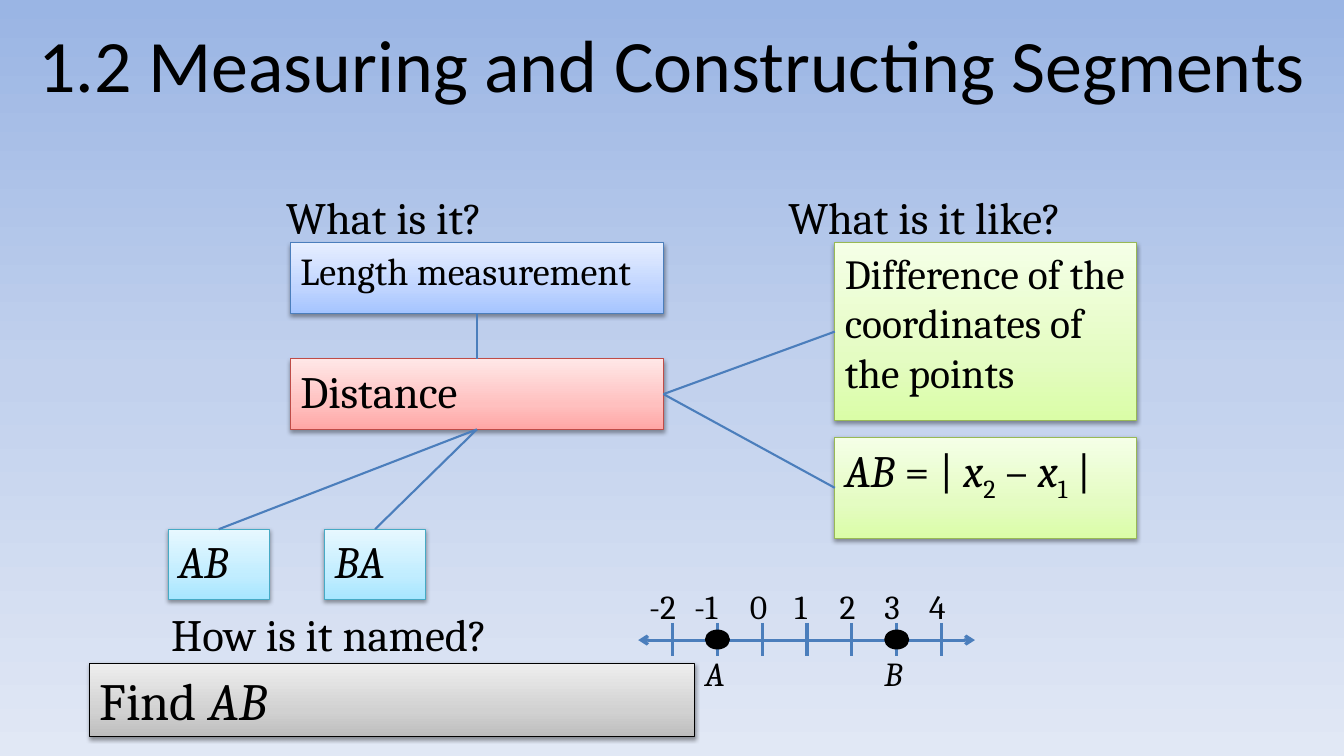
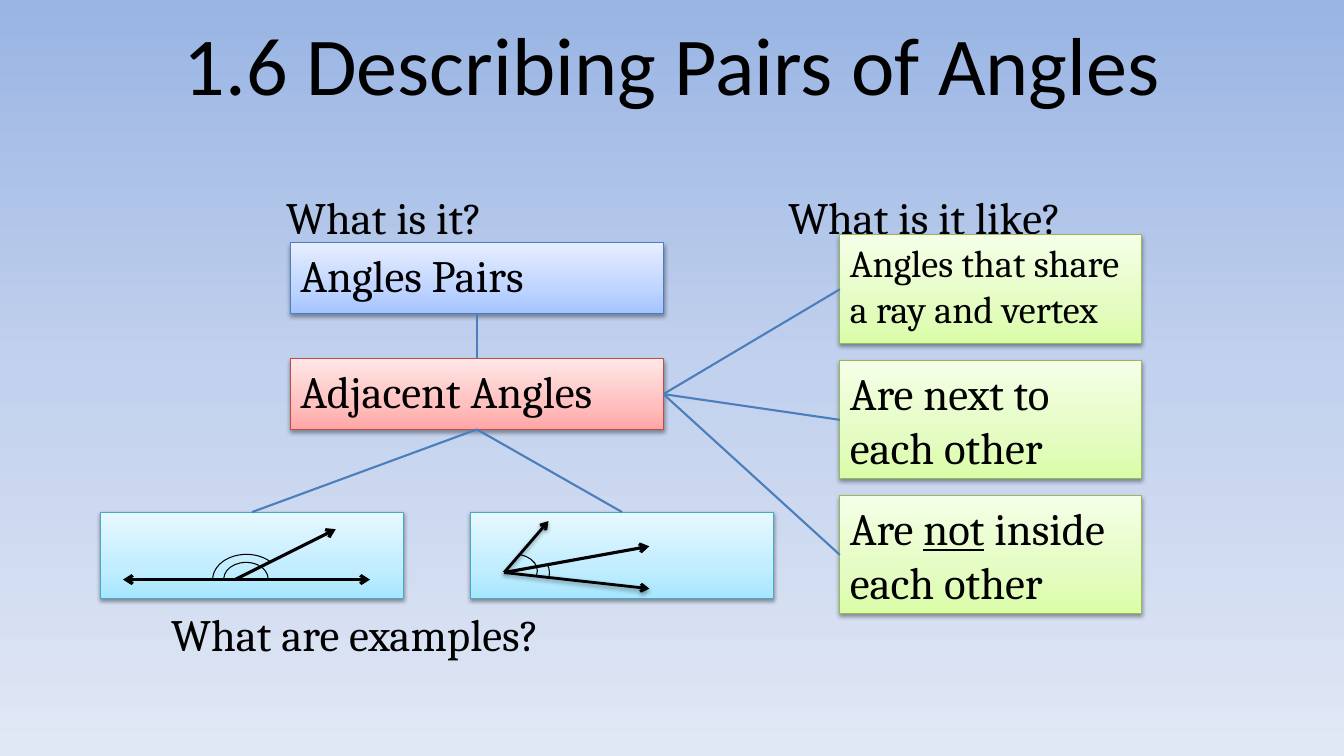
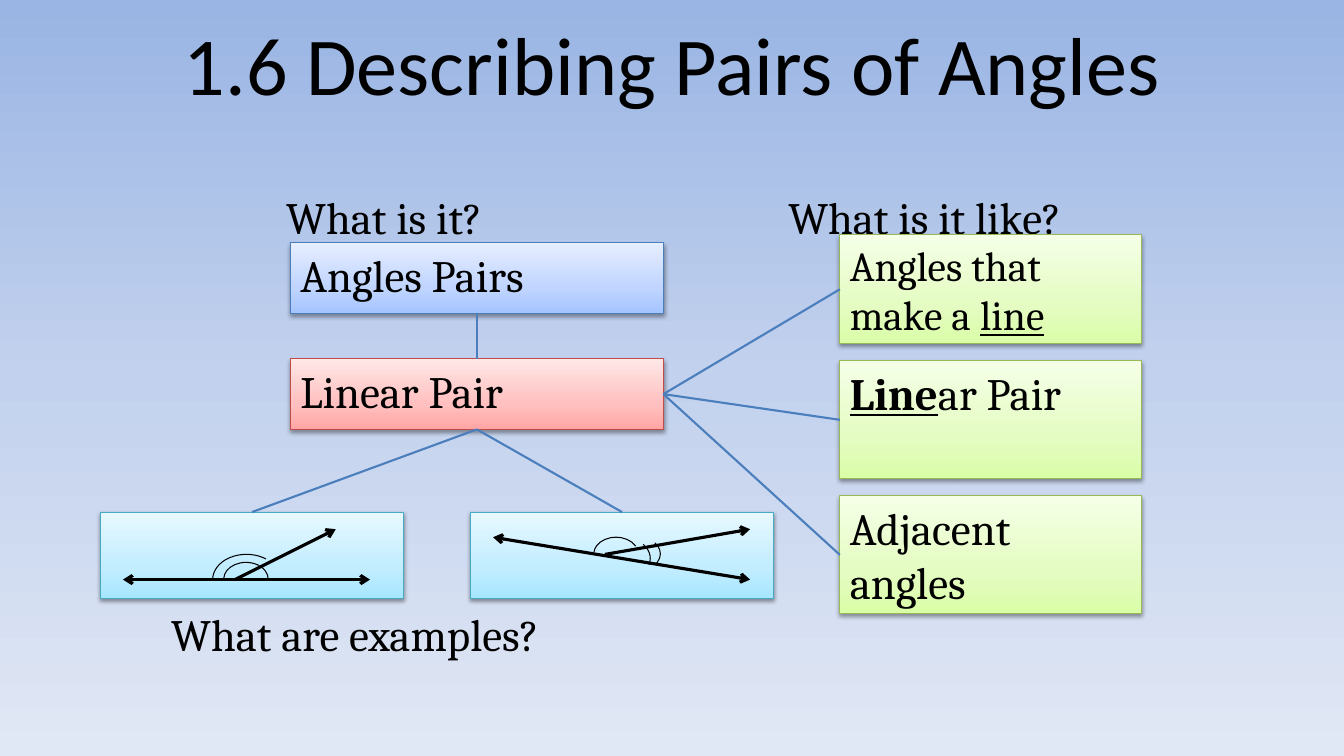
"""Build three concept-map slides on segments and pairs of angles."""
from copy import deepcopy

from lxml.etree import SubElement
from pptx import Presentation
from pptx.dml.color import RGBColor
from pptx.enum.shapes import MSO_CONNECTOR, MSO_SHAPE
from pptx.enum.text import MSO_ANCHOR, PP_ALIGN
from pptx.oxml.ns import qn
from pptx.util import Inches, Pt

BLACK = RGBColor(0x00, 0x00, 0x00)
LINK_BLUE = RGBColor(0x4B, 0x7E, 0xBC)
RED_EDGE = RGBColor(0xBF, 0x4C, 0x48)
GREEN_EDGE = RGBColor(0x98, 0xB9, 0x55)
AQUA_EDGE = RGBColor(0x46, 0xAA, 0xC5)


def gradient(middle, *colors):
    return list(zip((0, middle, 1), map(RGBColor.from_string, colors)))


BACKDROP = gradient(0.5, "9AB5E4", "C2D1ED", "E1E8F5")
BLUE = gradient(0.35, "A4C4FF", "BFD4FF", "E6EEFF"), LINK_BLUE
RED = gradient(0.35, "FFA6A5", "FFC0BF", "FFE7E7"), RED_EDGE
GREEN = gradient(0.35, "DAFDA7", "E4FCC2", "F5FFE7"), GREEN_EDGE
AQUA = gradient(0.35, "A7E6FF", "C1EDFF", "E7F8FF"), AQUA_EDGE
GRAY = gradient(0.35, "BDBDBD", "D1D1D1", "EEEEEE"), BLACK

TOP, LEFT, BOTTOM, RIGHT = range(4)


class ConceptDeck:
    """Holds the deck style and the slide being drawn."""

    def __init__(self):
        self.deck = Presentation()
        self.deck.slide_width = Inches(13.33)
        self.deck.slide_height = Inches(7.5)
        self.slide = None

    def new_slide(self, title, size):
        self.slide = self.deck.slides.add_slide(self.deck.slide_layouts[6])
        self.shade(self.slide.background.fill, self.slide.element, BACKDROP, 270)
        heading = self.label((0, 0, 13.33, 1.25), [title], size, "Calibri")
        heading.vertical_anchor = MSO_ANCHOR.MIDDLE
        heading.paragraphs[0].alignment = PP_ALIGN.CENTER

    def shade(self, fill, element, stops, angle):
        fill.gradient()
        fill.gradient_angle = angle
        stop_list = element.find(".//" + qn("a:gsLst"))
        stop_list.append(deepcopy(stop_list[0]))
        for stop, (position, color) in zip(fill.gradient_stops, stops):
            stop.position = position
            stop.color.rgb = color

    def cast_shadow(self, effects):
        shadow = SubElement(effects, qn("a:outerShdw"), blurRad="40000",
                            dist="20000", dir="5400000", rotWithShape="0")
        color = SubElement(shadow, qn("a:srgbClr"), val="000000")
        SubElement(color, qn("a:alpha"), val="38000")

    def add_text(self, frame, runs, size, font="Cambria"):
        frame.word_wrap = True
        frame.vertical_anchor = MSO_ANCHOR.TOP
        paragraph = frame.paragraphs[0]
        paragraph.alignment = PP_ALIGN.LEFT
        for part in runs:
            text, style = (part, "") if isinstance(part, str) else part
            run = paragraph.add_run()
            run.text = text
            run.font.name = font
            run.font.size = Pt(size)
            run.font.color.rgb = BLACK
            run.font.bold = style == "bold underline"
            run.font.italic = style == "italic"
            run.font.underline = "underline" in style
            if style == "subscript":
                run.font._element.set("baseline", "-25000")
        return frame

    def label(self, place, runs, size=32, font="Cambria"):
        area = self.slide.shapes.add_textbox(*map(Inches, place))
        return self.add_text(area.text_frame, runs, size, font)

    def box(self, place, theme, runs=(), size=32):
        stops, edge = theme
        box = self.slide.shapes.add_shape(MSO_SHAPE.RECTANGLE, *map(Inches, place))
        self.shade(box.fill, box.element, stops, 90)
        box.line.color.rgb = edge
        box.line.width = Pt(0.75)
        box.shadow.inherit = False
        self.cast_shadow(box.element.spPr.find(qn("a:effectLst")))
        self.add_text(box.text_frame, runs, size)
        return box

    def line(self, start, end, color=BLACK, width=2.25, ends=(), shadow=False):
        points = map(Inches, (*start, *end))
        line = self.slide.shapes.add_connector(MSO_CONNECTOR.STRAIGHT, *points)
        line.line.color.rgb = color
        line.line.width = Pt(width)
        outline = line.element.spPr.find(qn("a:ln"))
        for end_tag in ends:
            SubElement(outline, qn("a:" + end_tag), type="arrow")
        effects = SubElement(line.element.spPr, qn("a:effectLst"))
        if shadow:
            self.cast_shadow(effects)
        return line

    def ray(self, start, end, width=2.25, shadow=False):
        self.line(start, end, width=width, ends=["tailEnd"], shadow=shadow)

    def double_arrow(self, start, end, color=BLACK):
        self.line(start, end, color, ends=["headEnd", "tailEnd"])

    def link(self, source, source_side, target, target_side):
        link = self.line((0, 0), (0, 0), LINK_BLUE, 1.5)
        link.begin_connect(source, source_side)
        link.end_connect(target, target_side)

    def arc(self, place, start, end):
        arc = self.slide.shapes.add_shape(MSO_SHAPE.ARC, *map(Inches, place))
        arc.adjustments[0] = start
        arc.adjustments[1] = end
        arc.fill.background()
        arc.line.color.rgb = BLACK
        arc.line.width = Pt(0.75)
        arc.shadow.inherit = False

    def point(self, x, y, name):
        self.label((x - 0.22, 6.43, 0.44, 0.5), [(name, "italic")], 24)
        dot = self.slide.shapes.add_shape(
            MSO_SHAPE.OVAL, *map(Inches, (x - 0.11, y - 0.09, 0.22, 0.17)))
        dot.fill.solid()
        dot.fill.fore_color.rgb = BLACK
        dot.line.color.rgb = BLACK
        dot.line.width = Pt(2)
        dot.shadow.inherit = False

    def number_line(self):
        y, step = 6.35, 4 / 9
        self.double_arrow((6.33, y), (9.67, y), LINK_BLUE)
        for value in range(-2, 5):
            x = 7.56 + value * step
            self.line((x, y - 0.17), (x, y + 0.16), LINK_BLUE)
            indent = 0.33 if value < 0 else 0.22
            self.label((x - indent, 5.76, 0.56, 0.5), [str(value)], 24)
        for value, name in ((-1, "A"), (3, "B")):
            self.point(7.56 + value * step, y, name)

    def concept(self, category, name, question, category_size=32):
        concept = self.box((2.88, 3.56, 3.7, 0.7), RED, [name])
        parent = self.box((2.88, 2.41, 3.7, 0.7), BLUE, [category], category_size)
        self.link(parent, BOTTOM, concept, TOP)
        self.label((2.74, 1.83, 3.84, 0.64), ["What is it?"])
        self.label((7.72, 1.83, 3.84, 0.64), ["What is it like?"])
        self.label((1.6, 5.97, 7.11, 0.64), [question])
        return concept

    def traits(self, concept, left, top, rows):
        for height, size, runs in rows:
            trait = self.box((left, top, 2.99, height), GREEN, runs, size)
            self.link(concept, RIGHT, trait, LEFT)
            top += height + 0.17

    def example(self, concept, place, runs=()):
        example = self.box(place, AQUA, runs)
        self.link(concept, BOTTOM, example, TOP)

    def angle_pair_slide(self, name, rows, outer_arc_end):
        self.new_slide("1.6 Describing Pairs of Angles", 58.7)
        concept = self.concept("Angles Pairs", name, "What are examples?")
        self.traits(concept, 8.33, 2.33, rows)
        for left in (1, 4.67):
            self.example(concept, (left, 5.08, 3, 0.86))
        self.double_arrow((1.22, 5.75), (3.67, 5.75))
        self.ray((2.33, 5.75), (3.33, 5.25))
        self.arc((2.22, 5.58, 0.44, 0.33), 189, 0)
        self.arc((2.22, 5.58, 0.44, 0.33), 109.43, 188.02)
        self.arc((2.11, 5.5, 0.67, 0.5), 109.43, outer_arc_end)


def segments_slide(deck):
    deck.new_slide("1.2 Measuring and Constructing Segments", 52.8)
    distance = deck.concept("Length measurement", "Distance", "How is it named?", 27.2)
    formula = [("AB", "italic"), " = | ", ("x", "italic"), ("2", "subscript"),
               " – ", ("x", "italic"), ("1", "subscript"), " |"]
    deck.traits(distance, 8.28, 2.41, [
        (1.76, 29.6, ["Difference of the coordinates of the points"]),
        (1, 32, formula),
    ])
    for left, name in ((3.22, "BA"), (1.67, "AB")):
        deck.example(distance, (left, 5.25, 1, 0.7), [(name, "italic")])
    deck.number_line()
    deck.box((0.89, 6.58, 6, 0.73), GRAY, ["Find ", ("AB", "italic")], 37.3)


def adjacent_angles_slide(deck):
    deck.angle_pair_slide("Adjacent Angles", [
        (1.08, 27.2, ["Angles that share a ray and vertex"]),
        (1.17, 32, ["Are next to each other"]),
        (1.17, 32, ["Are ", ("not", "underline"), " inside each other"]),
    ], 193.94)
    vertex = (5, 5.68)
    deck.ray(vertex, (5.44, 5.17), 2, shadow=True)
    deck.ray(vertex, (6.44, 5.84), 2, shadow=True)
    deck.ray(vertex, (6.44, 5.42))
    deck.arc((4.89, 5.5, 0.44, 0.33), 170.42, 203.18)
    deck.arc((4.89, 5.5, 0.44, 0.33), 200.79, 8.1)
    deck.arc((4.89, 5.47, 0.56, 0.42), 205.06, 8.1)


def linear_pair_slide(deck):
    deck.angle_pair_slide("Linear Pair", [
        (1.08, 29.6, ["Angles that make a ", ("line", "underline")]),
        (1.17, 32, [("Line", "bold underline"), "ar Pair"]),
        (1.17, 32, ["Adjacent angles"]),
    ], 188.02)
    deck.ray((6, 5.5), (7.44, 5.25))
    deck.arc((5.89, 5.33, 0.44, 0.33), 110.45, 203.18)
    deck.arc((6.11, 5.33, 0.44, 0.33), 196.01, 18.27)
    deck.arc((5.89, 5.33, 0.56, 0.42), 196.01, 8.1)
    deck.double_arrow((4.89, 5.33), (7.44, 5.75))


def main():
    deck = ConceptDeck()
    segments_slide(deck)
    adjacent_angles_slide(deck)
    linear_pair_slide(deck)
    deck.deck.save("out.pptx")


if __name__ == "__main__":
    main()
